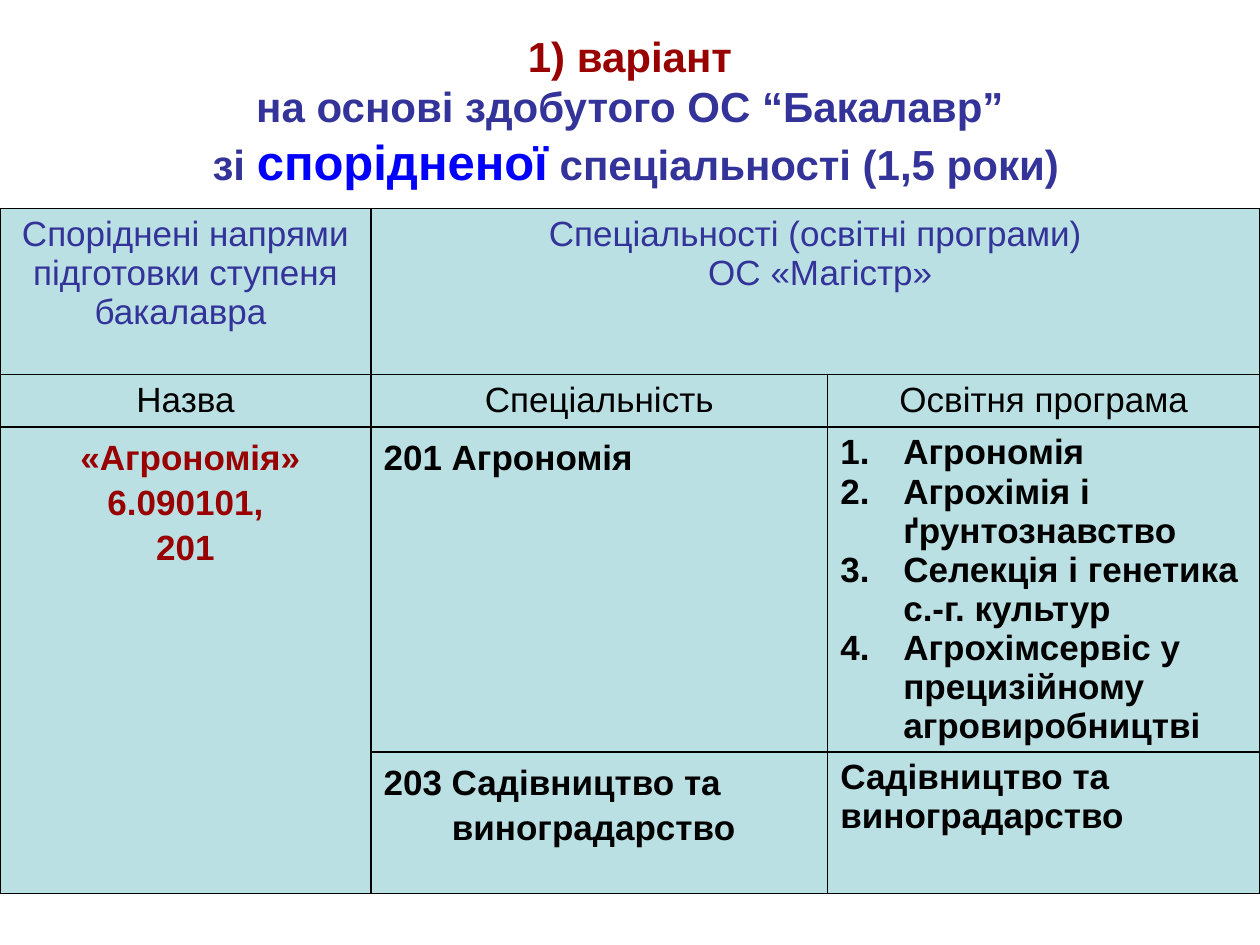
from lxml.etree import SubElement
from pptx import Presentation
from pptx.dml.color import RGBColor
from pptx.enum.text import MSO_ANCHOR as Anchor, MSO_AUTO_SIZE as AutoSize, PP_ALIGN as Align
from pptx.oxml import parse_xml
from pptx.oxml.ns import nsdecls, qn
from pptx.util import Pt

NAVY, MAROON, BLUE, BLACK, AQUA = "333399", "990000", "0000FF", "000000", "BBE0E3"
COLUMN_WIDTHS = [212, 261, 247]
ROW_HEIGHTS = [95, 30, 185, 81]
HEADING = {"size": Pt(20), "bold": False}
ENTRY = {"size": Pt(20), "bold": True}
CENTERED = {"alignment": Align.CENTER}
LEFT = {"alignment": Align.LEFT}
LOOSE = {"line_spacing": 1.15}


def color(hex_value):
    return RGBColor.from_string(hex_value)


def apply_format(target, values):
    for name, value in values.items():
        setattr(target, name, value)


def add_run(paragraph, words, hex_value, font_format):
    run = paragraph.add_run()
    run.text = words
    apply_format(run.font, {"name": "Arial", **font_format})
    run.font.color.rgb = color(hex_value)


def next_paragraph(frame, index):
    return frame.add_paragraph() if index else frame.paragraphs[0]


def add_title(slide):
    title = slide.shapes.title
    apply_format(title, {"left": Pt(36), "top": Pt(9), "width": Pt(648), "height": Pt(108)})
    frame = title.text_frame
    apply_format(frame, {"word_wrap": True, "auto_size": AutoSize.NONE,
                         "vertical_anchor": Anchor.MIDDLE})
    lines = [
        [("1) варіант", MAROON, 24)],
        [("на основі здобутого ОС “Бакалавр”", NAVY, 24)],
        [(" зі ", NAVY, 24), ("спорідненої", BLUE, 28),
         (" спеціальності (1,5 роки)", NAVY, 24)],
    ]
    for index, line in enumerate(lines):
        paragraph = next_paragraph(frame, index)
        apply_format(paragraph, {**CENTERED, "line_spacing": 1.0, "space_before": Pt(0)})
        for words, hex_value, size in line:
            add_run(paragraph, words, hex_value, {"size": Pt(size), "bold": True})


def style_cell(cell):
    cell.fill.solid()
    cell.fill.fore_color.rgb = color(AQUA)
    properties = cell._tc.get_or_add_tcPr()
    for position, side in enumerate(("lnL", "lnR", "lnT", "lnB")):
        properties.insert(position, parse_xml(
            f'<a:{side} {nsdecls("a")} w="{Pt(1)}"><a:solidFill>'
            f'<a:srgbClr val="{BLACK}"/></a:solidFill></a:{side}>'))


def indent(paragraph, margin, first_line=0):
    properties = paragraph._p.get_or_add_pPr()
    properties.set("marL", str(Pt(margin)))
    properties.set("indent", str(Pt(first_line)))
    return properties


def fill_cell(cell, lines, hex_value, font_format, layout):
    for index, line in enumerate(lines):
        paragraph = next_paragraph(cell.text_frame, index)
        apply_format(paragraph, layout)
        add_run(paragraph, line, hex_value, font_format)


def number_paragraphs(cell):
    for paragraph in cell.text_frame.paragraphs:
        properties = indent(paragraph, 36, -36)
        SubElement(properties, qn("a:buFont"), typeface="+mj-lt")
        SubElement(properties, qn("a:buAutoNum"), type="arabicPeriod")


def add_programme_table(slide):
    table = slide.shapes.add_table(
        len(ROW_HEIGHTS), len(COLUMN_WIDTHS), Pt(0), Pt(119),
        Pt(sum(COLUMN_WIDTHS)), Pt(sum(ROW_HEIGHTS))).table
    apply_format(table, {"first_row": False, "horz_banding": False})
    for column, width in zip(table.columns, COLUMN_WIDTHS):
        column.width = Pt(width)
    for row, height in zip(table.rows, ROW_HEIGHTS):
        row.height = Pt(height)
    for cell in table.iter_cells():
        style_cell(cell)
    table.cell(0, 1).merge(table.cell(0, 2))
    table.cell(2, 0).merge(table.cell(3, 0))

    contents = {
        (0, 0): (["Споріднені напрями підготовки ступеня бакалавра "], NAVY, HEADING, CENTERED),
        (0, 1): (["Спеціальності (освітні програми)", " ОС «Магістр»"], NAVY, HEADING, CENTERED),
        (1, 0): (["Назва"], BLACK, HEADING, CENTERED),
        (1, 1): (["Спеціальність"], BLACK, HEADING, CENTERED),
        (1, 2): (["Освітня програма"], BLACK, HEADING, CENTERED),
        (2, 0): ([" «Агрономія» 6.090101,", "201"], MAROON, ENTRY, {**CENTERED, **LOOSE}),
        (2, 1): (["201 Агрономія"], BLACK, ENTRY, {**LEFT, **LOOSE}),
        (2, 2): (["Агрономія", "Агрохімія і ґрунтознавство",
                  "Селекція і генетика с.-г. культур",
                  "Агрохімсервіс у прецизійному агровиробництві"], BLACK, ENTRY, LEFT),
        (3, 1): (["203 Садівництво та", "виноградарство"], BLACK, ENTRY, {**LEFT, **LOOSE}),
        (3, 2): (["Садівництво та", "виноградарство"], BLACK, ENTRY, LEFT),
    }
    for (row, column), content in contents.items():
        fill_cell(table.cell(row, column), *content)
    number_paragraphs(table.cell(2, 2))
    indent(table.cell(3, 1).text_frame.paragraphs[1], 39)


def main():
    presentation = Presentation()
    apply_format(presentation, {"slide_width": Pt(720), "slide_height": Pt(540)})
    slide = presentation.slides.add_slide(presentation.slide_layouts[5])
    add_title(slide)
    add_programme_table(slide)
    presentation.save("out.pptx")


if __name__ == "__main__":
    main()
